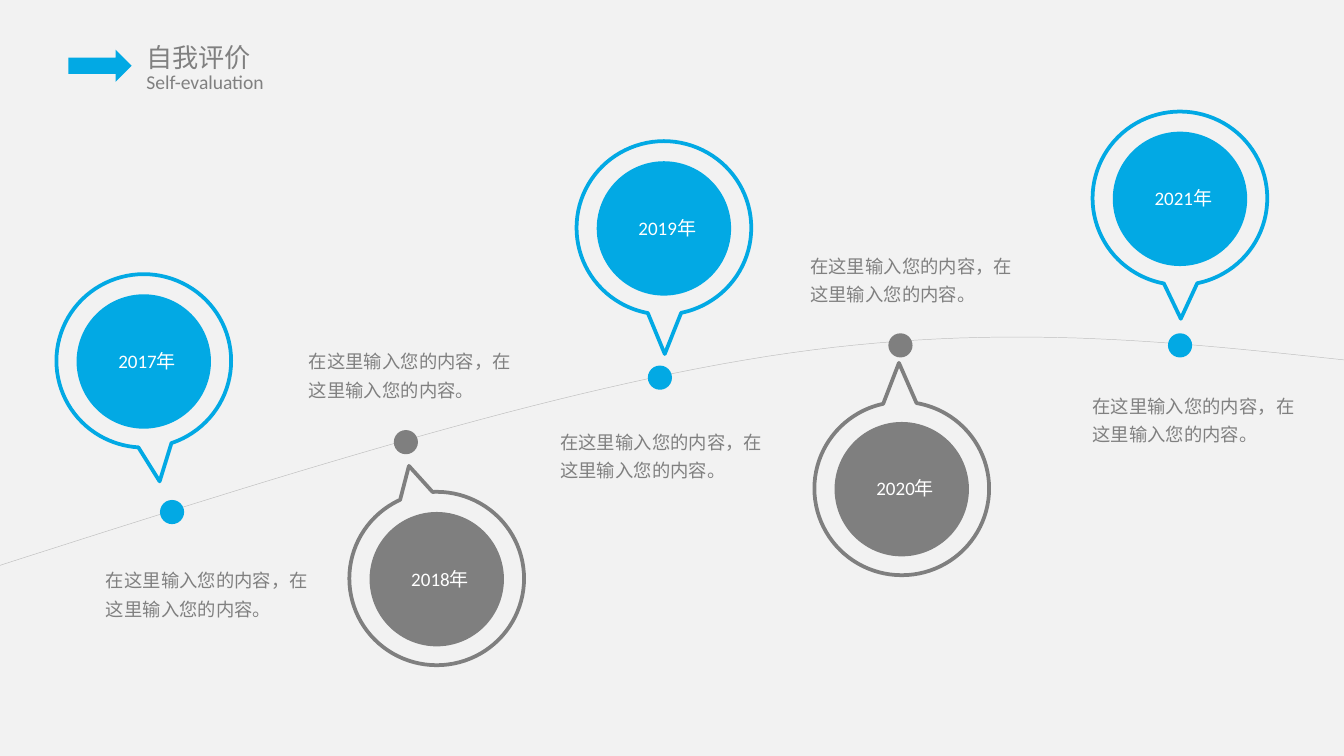
import pptx
import pptx.dml.color
import pptx.enum.shapes
import pptx.enum.text
import pptx.oxml.ns
import pptx.util
from lxml import etree

Inches = pptx.util.Inches
RGBColor = pptx.dml.color.RGBColor
MSO_SHAPE = pptx.enum.shapes.MSO_SHAPE
PP_ALIGN = pptx.enum.text.PP_ALIGN

BACKGROUND = RGBColor(0xF2, 0xF2, 0xF2)
BLUE = RGBColor(0x02, 0xA9, 0xE4)
GRAY = RGBColor(0x7F, 0x7F, 0x7F)
TEXT_GRAY = RGBColor(0x80, 0x80, 0x80)
CURVE_GRAY = RGBColor(0xBF, 0xBF, 0xBF)
WHITE = RGBColor(0xFF, 0xFF, 0xFF)

CHINESE_FONT = "Noto Sans CJK SC"
LATIN_FONT = "Calibri"
DESCRIPTION = "在这里输入您的内容，在这里输入您的内容。"

# Year, colour, callout corner, callout tip, dot corner, description corner
MILESTONES = [
    ("2017年", BLUE, (0.42, 2.04), (0.091, 0.695), (1.19, 3.72), (0.69, 4.14)),
    ("2018年", GRAY, (2.60, 3.66), (-0.159, -0.65), (2.93, 3.20), (2.20, 2.51)),
    ("2019年", BLUE, (4.29, 1.05), (0.005, 0.728), (4.82, 2.72), (4.07, 3.11)),
    ("2020年", GRAY, (6.06, 2.99), (-0.016, -0.725), (6.61, 2.48), (5.93, 1.80)),
    ("2021年", BLUE, (8.13, 0.83), (0.005, 0.695), (8.69, 2.48), (8.03, 2.84)),
]

CURVE_SEGMENTS = [
    [(-0.01, 4.21), (2.02, 3.56), (4.05, 2.91), (5.72, 2.65)],
    [(5.72, 2.65), (7.39, 2.39), (8.70, 2.54), (10.02, 2.68)],
]
CURVE_STEPS = 30


def set_text(shape, text, size, color, font_name, wrap=True, side_margin=0.1,
             alignment=PP_ALIGN.LEFT, line_spacing=1.0):
    frame_format = {
        "word_wrap": wrap,
        "auto_size": pptx.enum.text.MSO_AUTO_SIZE.NONE,
        "vertical_anchor": pptx.enum.text.MSO_ANCHOR.TOP,
        "margin_left": Inches(side_margin), "margin_right": Inches(side_margin),
        "margin_top": Inches(0.05), "margin_bottom": Inches(0.05),
    }
    frame = shape.text_frame
    for name, value in frame_format.items():
        setattr(frame, name, value)
    paragraph = frame.paragraphs[0]
    paragraph.alignment = alignment
    paragraph.line_spacing = line_spacing
    run = paragraph.add_run()
    run.text = text
    run.font.size = pptx.util.Pt(size)
    run.font.color.rgb = color
    run.font.name = font_name
    east_asian = etree.SubElement(run.font._element, pptx.oxml.ns.qn("a:ea"))
    east_asian.set("typeface", CHINESE_FONT)


def add_text(shapes, box, text, size, color, font_name, **text_format):
    shape = shapes.add_textbox(*map(Inches, box))
    set_text(shape, text, size, color, font_name, **text_format)


def add_filled_shape(shapes, kind, box, color):
    shape = shapes.add_shape(kind, *map(Inches, box))
    shape.shadow.inherit = False
    shape.fill.solid()
    shape.fill.fore_color.rgb = color
    shape.line.fill.background()


def add_callout(shapes, box, tip, color):
    callout = shapes.add_shape(MSO_SHAPE.OVAL_CALLOUT, *map(Inches, box))
    callout.shadow.inherit = False
    callout.adjustments[0], callout.adjustments[1] = tip
    callout.fill.background()
    callout.line.color.rgb = color
    callout.line.width = pptx.util.Pt(2)


def bezier_point(segment, t):
    """Return the point at t on a cubic curve, in EMU."""
    weights = ((1 - t) ** 3, 3 * t * (1 - t) ** 2, 3 * t ** 2 * (1 - t), t ** 3)
    return tuple(Inches(sum(weight * value for weight, value in zip(weights, axis)))
                 for axis in zip(*segment))


def add_curve(shapes):
    points = [bezier_point(segment, step / CURVE_STEPS)
              for segment in CURVE_SEGMENTS
              for step in range(CURVE_STEPS + 1)]
    builder = shapes.build_freeform(*points[0])
    builder.add_line_segments(points[1:], close=False)
    curve = builder.convert_to_shape()
    curve.shadow.inherit = False
    curve.fill.background()
    curve.line.color.rgb = CURVE_GRAY
    curve.line.width = pptx.util.Pt(0.25)


def add_header(slide):
    title = slide.shapes.title
    box = {"left": 0.98, "top": 0.26, "width": 1, "height": 0.34}
    for name, value in box.items():
        setattr(title, name, Inches(value))
    set_text(title, "自我评价", 14, TEXT_GRAY, CHINESE_FONT,
             wrap=False, side_margin=0.11)
    add_text(slide.shapes, (0.98, 0.47, 1.11, 0.28), "Self-evaluation",
             10.5, TEXT_GRAY, LATIN_FONT, wrap=False, side_margin=0.11)
    add_filled_shape(slide.shapes, MSO_SHAPE.RIGHT_ARROW,
                     (0.51, 0.37, 0.47, 0.24), BLUE)


def add_milestone(shapes, year, color, corner, tip, dot, description):
    add_filled_shape(shapes, MSO_SHAPE.OVAL, (*dot, 0.18, 0.18), color)
    add_text(shapes, (*description, 1.71, 0.74), DESCRIPTION, 9.8, TEXT_GRAY,
             CHINESE_FONT, line_spacing=1.3)
    left, top = corner
    badge = shapes.add_group_shape().shapes
    add_callout(badge, (left, top, 1.3, 1.29), tip, color)
    add_filled_shape(badge, MSO_SHAPE.OVAL, (left + 0.15, top + 0.15, 1, 1), color)
    add_text(badge, (left + 0.36, top + 0.51, 0.63, 0.27), year, 10.2, WHITE,
             LATIN_FONT, alignment=PP_ALIGN.CENTER)


def main():
    presentation = pptx.Presentation()
    presentation.slide_width = Inches(10)
    presentation.slide_height = presentation.slide_width * 9 // 16
    slide = presentation.slides.add_slide(presentation.slide_layouts[5])
    slide.background.fill.solid()
    slide.background.fill.fore_color.rgb = BACKGROUND
    add_header(slide)
    add_curve(slide.shapes)
    for milestone in MILESTONES:
        add_milestone(slide.shapes, *milestone)
    presentation.save("out.pptx")


if __name__ == "__main__":
    main()
